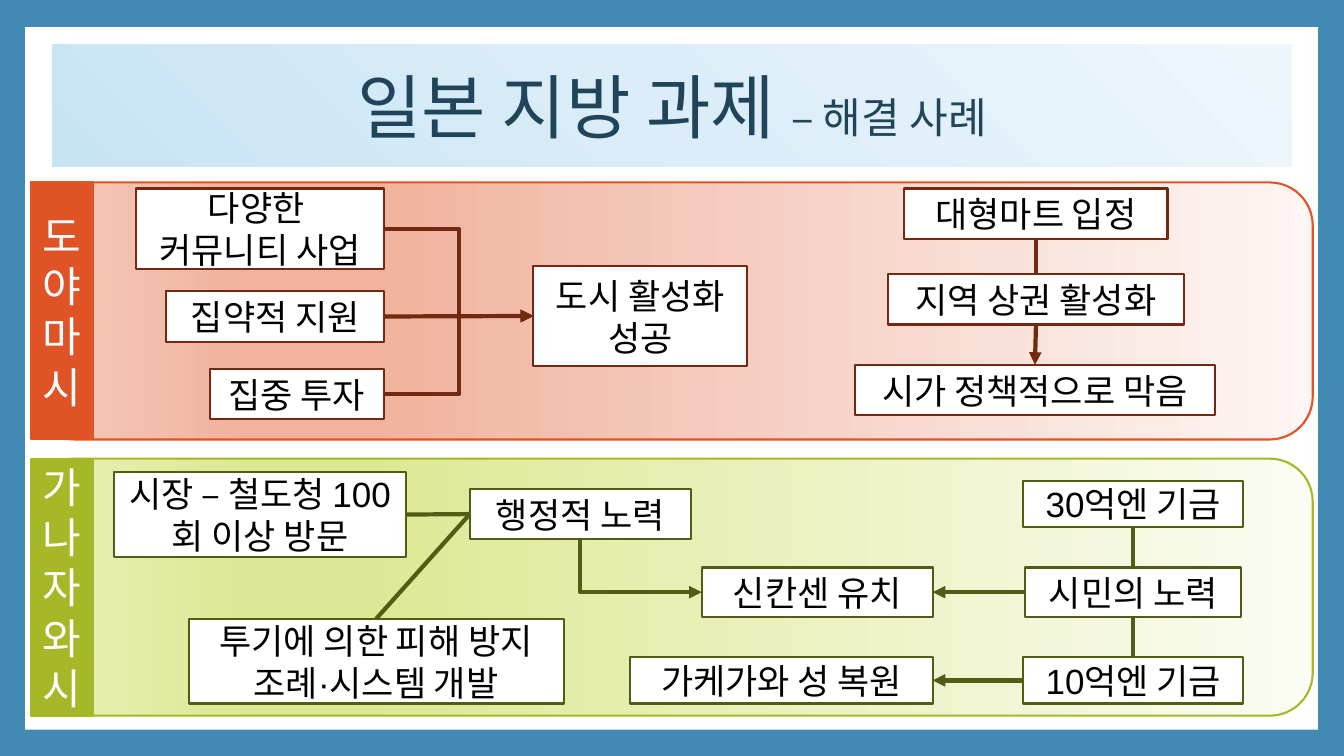
from lxml import etree
from pptx import Presentation
from pptx.dml.color import RGBColor
from pptx.enum.shapes import MSO_CONNECTOR as Link, MSO_SHAPE as Preset
from pptx.enum.text import MSO_ANCHOR as Anchor, PP_ALIGN as Align
from pptx.oxml import parse_xml
from pptx.oxml.ns import nsdecls, qn
from pptx.util import Inches, Pt

BLUE = RGBColor(0x41, 0x8A, 0xB3)
NAVY = RGBColor(0x20, 0x45, 0x5A)
WHITE = RGBColor(0xFF, 0xFF, 0xFF)
BLACK = RGBColor(0x00, 0x00, 0x00)
ORANGE = RGBColor(0xDF, 0x53, 0x27)
BROWN = RGBColor(0x72, 0x28, 0x11)
GREEN = RGBColor(0xA6, 0xB7, 0x27)
OLIVE = RGBColor(0x53, 0x5C, 0x14)


def shades(*values):
    return [RGBColor.from_string(value) for value in values]


ORANGE_SHADES = shades("FDF6F4", "F1B29E", "F1B29E", "F5CBBE")
GREEN_SHADES = shades("FBFCF3", "DEE894", "DEE894", "E9F0B8")
TITLE_SHADES = shades("C7E4F5", "DBEDF8", "EDF6FB")
LEFTWARD = '<a:lin ang="10800000" scaled="0"/>'
FROM_CORNER = '<a:path path="circle"><a:fillToRect t="100000" r="100000"/></a:path>'

TOP, LEFT, BOTTOM, RIGHT = range(4)
PANEL = (0.31, 12.71, 2.55)
TAB_WIDTH = 0.61


def add_box(page, area, fill=None, line=None, preset=Preset.RECTANGLE):
    box = page.shapes.add_shape(preset, *(Inches(value) for value in area))
    box.shadow.inherit = False
    if fill is None:
        box.fill.background()
    else:
        box.fill.solid()
        box.fill.fore_color.rgb = fill
    if line is None:
        box.line.fill.background()
    else:
        box.line.color.rgb = line
        box.line.width = Pt(1.5)
    return box


def set_gradient(box, positions, colors, direction):
    stops = "".join(
        f'<a:gs pos="{position * 1000}"><a:srgbClr val="{color}"/></a:gs>'
        for position, color in zip(positions, colors)
    )
    gradient = parse_xml(
        f'<a:gradFill {nsdecls("a")} rotWithShape="1">'
        f"<a:gsLst>{stops}</a:gsLst>{direction}</a:gradFill>"
    )
    properties = box.element.spPr
    properties.replace(properties.find(qn("a:noFill")), gradient)


def write(para, text, size=25, color=BLACK, font="Arial"):
    para.alignment = Align.CENTER
    span = para.add_run()
    span.text = text
    span.font.size = Pt(size)
    span.font.color.rgb = color
    span.font.name = font


def center_frame(box):
    frame = box.text_frame
    frame.word_wrap = True
    frame.vertical_anchor = Anchor.MIDDLE
    return frame


def add_node(page, origin, offset, size, lines, line):
    area = (origin[0] + offset[0], origin[1] + offset[1], *size)
    box = add_box(page, area, WHITE, line)
    frame = center_frame(box)
    for index, text in enumerate(lines.split("\n")):
        write(frame.add_paragraph() if index else frame.paragraphs[0], text)
    return box


def connect(page, start, start_side, finish, finish_side, color,
            kind=Link.STRAIGHT, arrow=None):
    connector = page.shapes.add_connector(kind, 0, 0, 0, 0)
    connector.begin_connect(start, start_side)
    connector.end_connect(finish, finish_side)
    connector.line.color.rgb = color
    connector.line.width = Pt(3)
    properties = connector.element.spPr
    if arrow:
        etree.SubElement(properties.find(qn("a:ln")), qn(f"a:{arrow}"), type="triangle")
    etree.SubElement(properties, qn("a:effectLst"))
    return connector


def add_title(page, area):
    box = add_box(page, area)
    set_gradient(box, (0, 50, 100), TITLE_SHADES, FROM_CORNER)
    para = center_frame(box).paragraphs[0]
    write(para, "일본 지방 과제 ", size=50, color=NAVY)
    write(para, "– 해결 사례", size=30, color=NAVY)


def add_panel(page, top, city, color, colors):
    left, width, height = PANEL
    panel = add_box(page, (left, top, width, height), line=color,
                    preset=Preset.ROUNDED_RECTANGLE)
    set_gradient(panel, (0, 74, 83, 100), colors, LEFTWARD)
    tab = add_box(page, (left, top, TAB_WIDTH, height), color, color)
    write(center_frame(tab).paragraphs[0], city, size=30, color=WHITE, font="Cabin")
    return left, top


def add_toyama(page, top):
    origin = add_panel(page, top, "도야마시", ORANGE, ORANGE_SHADES)

    def node(offset, size, text):
        return add_node(page, origin, offset, size, text, BROWN)

    community = node((1.04, 0.06), (2.46, 0.8), "다양한 \n커뮤니티 사업")
    support = node((1.34, 1.08), (2.16, 0.5), "집약적 지원")
    investment = node((1.77, 1.85), (1.73, 0.5), "집중 투자")
    success = node((4.98, 0.83), (2.12, 0.99), "도시 활성화 성공")
    mart = node((8.66, 0.06), (2.61, 0.5), "대형마트 입정")
    district = node((8.5, 0.91), (2.93, 0.5), "지역 상권 활성화")
    policy = node((8.17, 1.81), (3.57, 0.5), "시가 정책적으로 막음")

    for cause, kind in ((community, Link.ELBOW), (support, Link.STRAIGHT),
                        (investment, Link.ELBOW)):
        connect(page, cause, RIGHT, success, LEFT, BROWN, kind, "tailEnd")
    connect(page, mart, BOTTOM, district, TOP, BROWN)
    connect(page, district, BOTTOM, policy, TOP, BROWN, arrow="tailEnd")


def add_kanazawa(page, top):
    origin = add_panel(page, top, "가나자와시", GREEN, GREEN_SHADES)

    def node(offset, size, text):
        return add_node(page, origin, offset, size, text, OLIVE)

    mayor = node((0.82, 0.13), (2.9, 0.85), "시장 – 철도청 100회 이상 방문")
    effort = node((4.35, 0.3), (2.19, 0.5), "행정적 노력")
    ordinance = node((1.56, 1.59), (3.72, 0.84), "투기에 의한 피해 방지 조례·시스템 개발")
    train = node((6.65, 1.08), (2.29, 0.49), "신칸센 유치")
    castle = node((5.94, 1.97), (3, 0.46), "가케가와 성 복원")
    large_fund = node((9.84, 0.22), (2.18, 0.46), "30억엔 기금")
    citizens = node((9.86, 1.08), (2.14, 0.49), "시민의 노력")
    small_fund = node((9.84, 1.97), (2.18, 0.46), "10억엔 기금")

    connect(page, mayor, RIGHT, effort, LEFT, OLIVE)
    connect(page, effort, LEFT, ordinance, TOP, OLIVE)
    corner = connect(page, train, LEFT, effort, BOTTOM, OLIVE, Link.ELBOW, "headEnd")
    corner.element.spPr.find(qn("a:prstGeom")).set("prst", "bentConnector2")
    connect(page, large_fund, BOTTOM, citizens, TOP, OLIVE)
    connect(page, citizens, BOTTOM, small_fund, TOP, OLIVE)
    connect(page, citizens, LEFT, train, RIGHT, OLIVE, arrow="tailEnd")
    connect(page, small_fund, LEFT, castle, RIGHT, OLIVE, arrow="tailEnd")


def main():
    deck = Presentation()
    deck.slide_width, deck.slide_height = Inches(13.33), Inches(7.5)
    page = deck.slides.add_slide(deck.slide_layouts[6])
    page.background.fill.solid()
    page.background.fill.fore_color.rgb = BLUE
    add_box(page, (0.25, 0.27, 12.82, 6.97), WHITE)
    add_title(page, (0.52, 0.44, 12.29, 1.21))
    add_toyama(page, 1.81)
    add_kanazawa(page, 4.55)
    deck.save("out.pptx")


if __name__ == "__main__":
    main()
